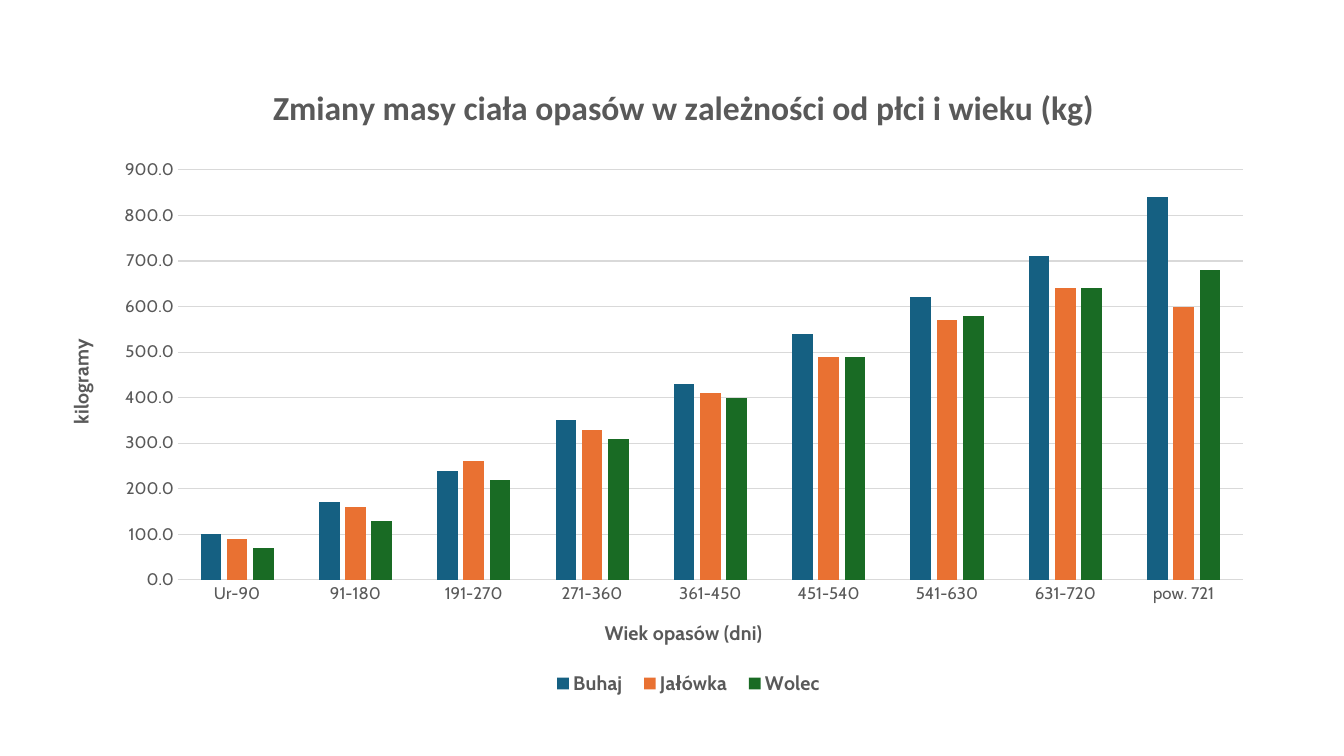
from dataclasses import dataclass

from lxml.etree import SubElement
from pptx import Presentation
from pptx.chart.data import CategoryChartData as Data
from pptx.dml.color import RGBColor as Rgb
from pptx.enum.chart import XL_CHART_TYPE as Kind
from pptx.enum.chart import XL_LEGEND_POSITION as Place
from pptx.enum.chart import XL_TICK_MARK as Tick
from pptx.oxml.ns import qn
from pptx.util import Pt

SCALE = 914400 / 100.8  # EMU in one px
WIDE, HIGH = 1344, 756
BOX = (46, 68, 1222, 639)  # chart frame: left, top, width, height

AGES = ["Ur-90", "91-180", "191-270", "271-360", "361-450",
        "451-540", "541-630", "631-720", "pow. 721"]
HERD = {
    "Buhaj": (100, 170, 240, 350, 430, 540, 620, 710, 840),
    "Jałówka": (90, 160, 260, 330, 410, 490, 570, 640, 600),
    "Wolec": (70, 130, 220, 310, 400, 490, 580, 640, 680),
}


@dataclass
class Theme:
    face: str = "Cabin"
    head: str = "Calibri"
    ink: str = "595959"
    rule: str = "D9D9D9"
    bars: tuple = ("156082", "E97132", "196B24")
    big: int = 24
    mid: int = 14
    small: int = 12


def emu(px):
    return round(px * SCALE)


class Deck:
    def __init__(self, theme):
        self.theme = theme
        self.prs = Presentation()
        self.prs.slide_width, self.prs.slide_height = emu(WIDE), emu(HIGH)
        self.slide = self.prs.slides.add_slide(self.prs.slide_layouts[6])

    def style(self, font, size, bold=False, face=None):
        font.name = face or self.theme.face
        font.size, font.bold = Pt(size), bold
        font.color.rgb = Rgb.from_string(self.theme.ink)

    def rule(self, line):
        line.color.rgb = Rgb.from_string(self.theme.rule)
        line.width = Pt(0.75)

    def place(self, node, index, left, top, size=None):
        """Pin a chart part at a slide position given in px."""
        for old in node.findall(qn("c:layout")):
            node.remove(old)
        layout = SubElement(node, qn("c:layout"))
        node.insert(index, layout)
        spot = SubElement(layout, qn("c:manualLayout"))
        x, y, wide, high = BOX
        parts = {"xMode": "edge", "yMode": "edge",
                 "x": (left - x) / wide, "y": (top - y) / high}
        if size:
            parts.update(w=size[0] / wide, h=size[1] / high)
        if node.tag == qn("c:plotArea"):
            parts = {"layoutTarget": "inner", **parts}
        for name, val in parts.items():
            text = val if isinstance(val, str) else f"{val:.4f}"
            SubElement(spot, qn("c:" + name)).set("val", text)

    def title(self, title, text, size, left, top, face=None, turn=0):
        frame = title.text_frame
        frame.text = text
        self.style(frame.paragraphs[0].runs[0].font, size, True, face)
        node = title._element
        node.xpath(".//a:bodyPr")[0].set("rot", str(turn * 60000))
        self.place(node, 1, left, top)

    def axis(self, axis, text, left, top, turn=0):
        axis.major_tick_mark = axis.minor_tick_mark = Tick.NONE
        self.style(axis.tick_labels.font, self.theme.small)
        self.title(axis.axis_title, text, self.theme.mid, left, top, turn=turn)

    def columns(self, cats, rows):
        data = Data(number_format="###0.0")
        data.categories = cats
        for name, vals in rows.items():
            data.add_series(name, vals)
        frame = self.slide.shapes.add_chart(
            Kind.COLUMN_CLUSTERED, *map(emu, BOX), data)
        chart = frame.chart
        self.style(chart.font, self.theme.small)
        plot = chart.plots[0]
        plot.gap_width, plot.overlap = 219, -27
        plot.vary_by_categories = False
        for row, tint in zip(plot.series, self.theme.bars):
            row.format.fill.solid()
            row.format.fill.fore_color.rgb = Rgb.from_string(tint)
        return chart

    def legend(self, chart, left, top, size):
        chart.has_legend = True
        key = chart.legend
        key.position = Place.BOTTOM
        key.include_in_layout = False
        self.style(key.font, self.theme.mid, True)
        self.place(key._element, 1, left, top, size)


def main():
    theme = Theme()
    deck = Deck(theme)

    # Columns and heading
    chart = deck.columns(AGES, HERD)
    chart.has_title = True
    deck.title(chart.chart_title,
               "Zmiany masy ciała opasów w zależności od płci i wieku (kg)",
               theme.big, 267, 79, theme.head)
    area = chart._chartSpace.xpath(".//c:plotArea")[0]
    deck.place(area, 0, 178, 170, (1065, 410))

    # Age axis
    ages = chart.category_axis
    deck.axis(ages, "Wiek opasów (dni)", 601, 616)
    deck.rule(ages.format.line)

    # Weight axis
    mass = chart.value_axis
    deck.axis(mass, "kilogramy", 64, 335, turn=-90)
    mass.minimum_scale, mass.maximum_scale, mass.major_unit = 0, 900, 100
    mass.tick_labels.number_format = "###0.0"
    mass.tick_labels.number_format_is_linked = False
    mass.format.line.fill.background()
    mass.has_major_gridlines = True
    deck.rule(mass.major_gridlines.format.line)

    # Legend
    deck.legend(chart, 542, 669, (293, 29))
    deck.prs.save("out.pptx")


if __name__ == "__main__":
    main()
